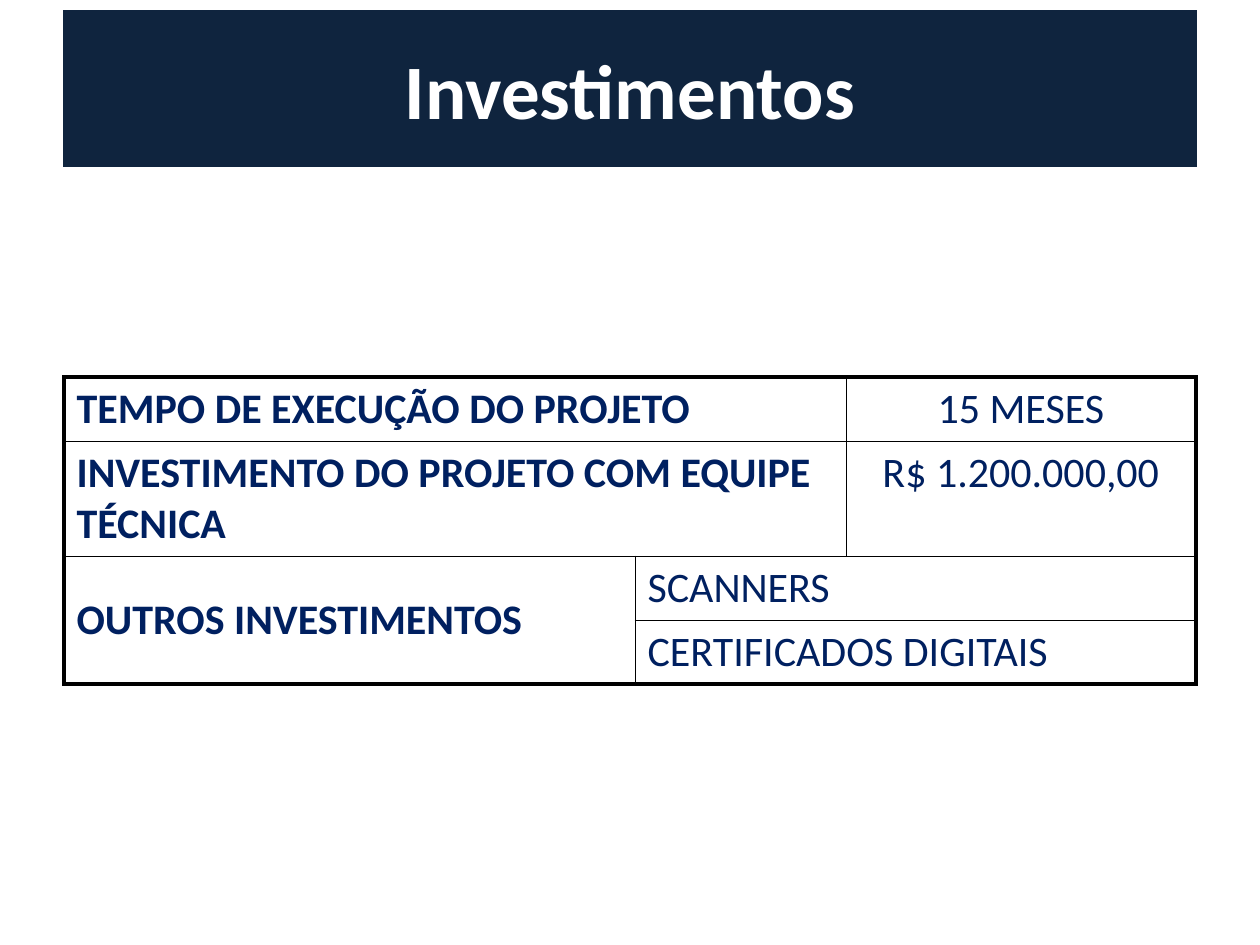
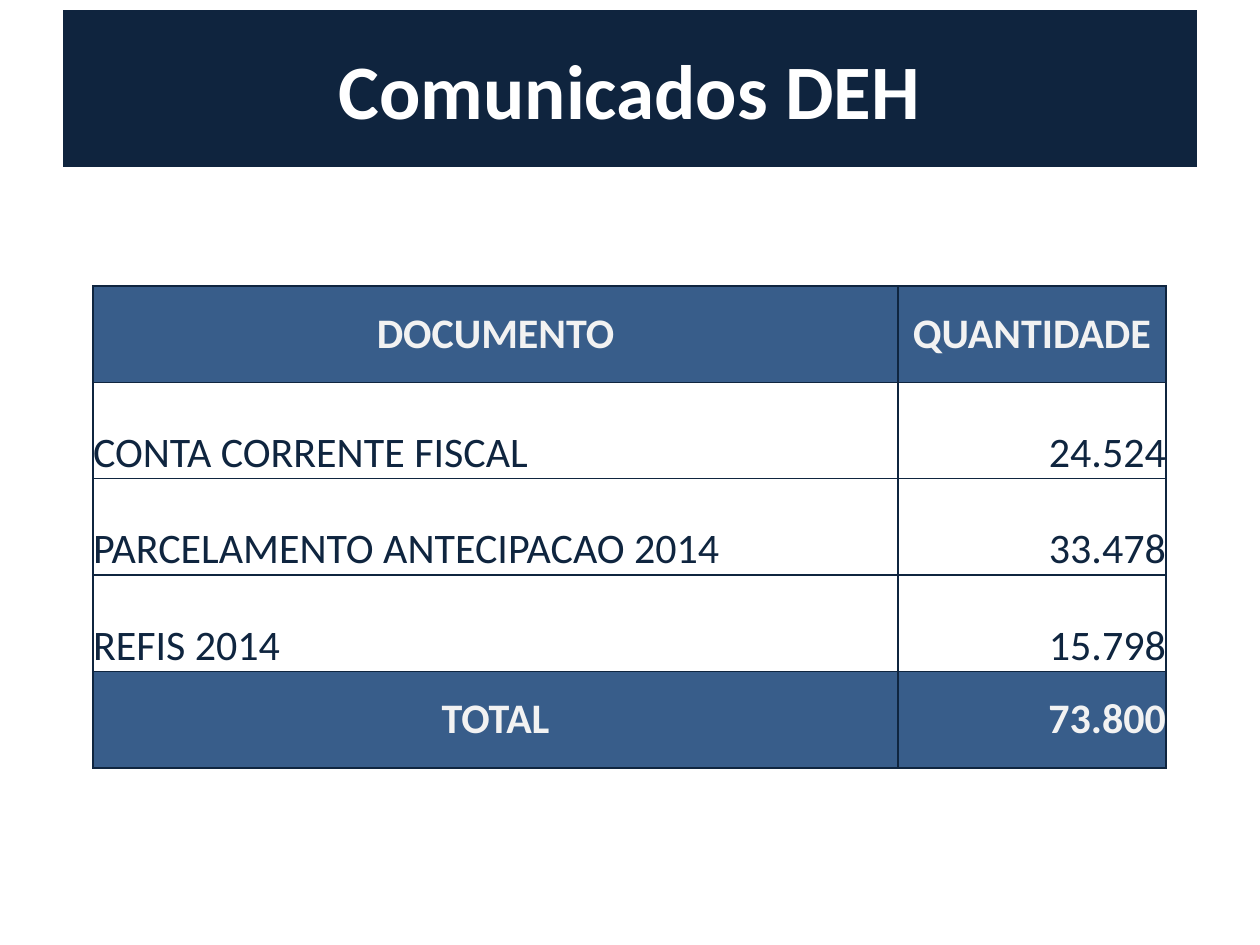
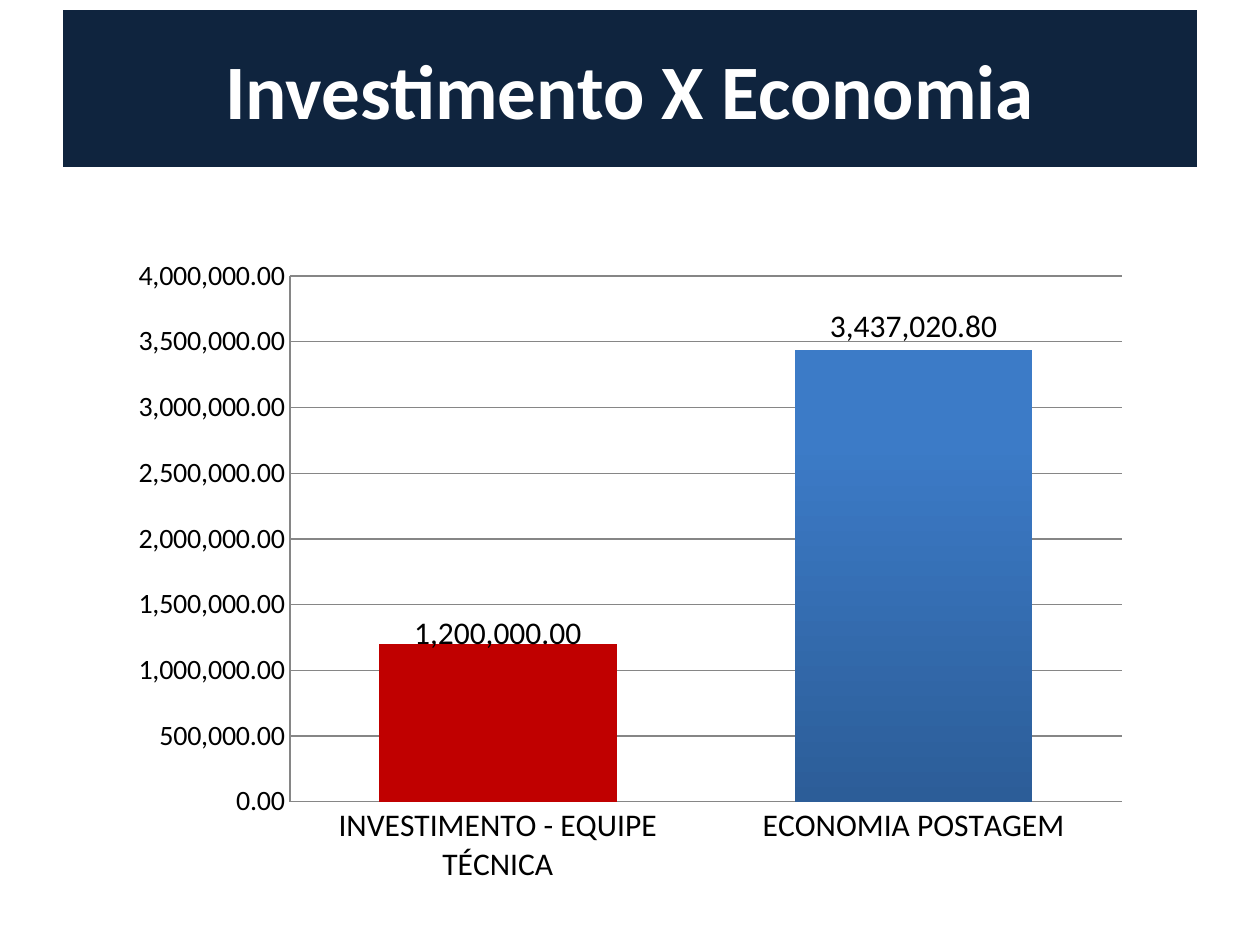
from lxml import etree
from pptx import Presentation
from pptx import util as u
from pptx.chart import data
from pptx.dml.color import RGBColor
from pptx.enum import chart as ch
from pptx.enum import text
from pptx.oxml import ns

EMU_PER_PX = 914400 / 126
FONT = "Calibri"
MONEY = "#,##0.00"
COLORS = {
    "band": "0F243E", "white": "FFFFFF", "black": "000000", "navy": "002060",
    "ink": "0F253F", "header": "385D8A", "header_text": "F2F2F2",
    "cost": "C00000", "saving_low": "2C5D98", "saving_high": "3C7BC7", "grid": "868686",
}
RGB = {name: RGBColor.from_string(value) for name, value in COLORS.items()}
LEFT, CENTER, RIGHT = text.PP_ALIGN.LEFT, text.PP_ALIGN.CENTER, text.PP_ALIGN.RIGHT
TOP, MIDDLE, BOTTOM = text.MSO_ANCHOR.TOP, text.MSO_ANCHOR.MIDDLE, text.MSO_ANCHOR.BOTTOM


def px(*lengths):
    return [u.Emu(round(length * EMU_PER_PX)) for length in lengths]


def format_cell(cell, color, bold, align, anchor, fill, line, widths):
    for side, width in zip("LRTB", widths):
        edge = etree.SubElement(cell._tc.get_or_add_tcPr(), ns.qn(f"a:ln{side}"), w=str(u.Pt(width)))
        paint = etree.SubElement(edge, ns.qn("a:solidFill"))
        etree.SubElement(paint, ns.qn("a:srgbClr"), val=COLORS[line])
    cell.fill.solid()
    cell.fill.fore_color.rgb = RGB[fill]
    cell.vertical_anchor = anchor
    paragraph = cell.text_frame.paragraphs[0]
    paragraph.alignment = align
    paragraph.font.name = FONT
    paragraph.font.size = u.Pt(24)
    paragraph.font.bold = bold
    paragraph.font.color.rgb = RGB[color]


prs = Presentation()
prs.slide_width, prs.slide_height = px(1260, 945)

slides = []
for heading in ["Investimentos", "Comunicados DEH", "Investimento X Economia"]:
    slide = prs.slides.add_slide(prs.slide_layouts[5])
    band = slide.shapes.title
    band.left, band.top, band.width, band.height = px(63, 10, 1134, 157)
    band.fill.solid()
    band.fill.fore_color.rgb = RGB["band"]
    band.text_frame.text = heading
    band.text_frame.vertical_anchor = MIDDLE
    paragraph = band.text_frame.paragraphs[0]
    paragraph.alignment = CENTER
    paragraph.font.name = FONT
    paragraph.font.size = u.Pt(44)
    paragraph.font.bold = True
    paragraph.font.color.rgb = RGB["white"]
    slides.append(slide)
investments_slide, notices_slide, comparison_slide = slides

investments = investments_slide.shapes.add_table(4, 3, *px(64, 377, 1132, 307)).table
for column, width in zip(investments.columns, px(571, 211, 350)):
    column.width = width
for row, height in zip(investments.rows, px(64, 115, 64, 64)):
    row.height = height
entries = [
    (0, 0, 1, 2, "TEMPO DE EXECUÇÃO DO PROJETO", True, LEFT),
    (0, 2, 1, 1, "15 MESES", False, CENTER),
    (1, 0, 1, 2, "INVESTIMENTO DO PROJETO COM EQUIPE TÉCNICA", True, LEFT),
    (1, 2, 1, 1, "R$ 1.200.000,00", False, CENTER),
    (2, 0, 2, 1, "OUTROS INVESTIMENTOS", True, LEFT),
    (2, 1, 1, 2, "SCANNERS", False, LEFT),
    (3, 1, 1, 2, "CERTIFICADOS DIGITAIS", False, LEFT),
]
for r, c, height, width, words, bold, align in entries:
    first = investments.cell(r, c)
    if height * width > 1:
        first.merge(investments.cell(r + height - 1, c + width - 1))
    first.text = words
    on_frame = (c == 0, c + width == 3, r == 0, r + height == 4)
    widths = [2.25 if outer else 0.5 for outer in on_frame]
    for i in range(r, r + height):
        for j in range(c, c + width):
            format_cell(investments.cell(i, j), "navy", bold, align,
                        MIDDLE if bold else TOP, "white", "black", widths)

counts = [
    ("DOCUMENTO", "QUANTIDADE"),
    ("CONTA CORRENTE FISCAL", "24.524"),
    ("PARCELAMENTO ANTECIPACAO 2014", "33.478"),
    ("REFIS 2014", "15.798"),
    ("TOTAL", "73.800"),
]
notices = notices_slide.shapes.add_table(5, 2, *px(93, 286, 1073, 482)).table
for column, width in zip(notices.columns, px(805, 268)):
    column.width = width
for r, record in enumerate(counts):
    strong = r in (0, len(counts) - 1)
    for c, words in enumerate(record):
        cell = notices.cell(r, c)
        cell.text = words
        cell.margin_left = cell.margin_right = cell.margin_top = cell.margin_bottom = 0
        if r == 0 or (strong and c == 0):
            align = CENTER
        else:
            align = RIGHT if c else LEFT
        format_cell(cell, "header_text" if strong else "ink", strong, align,
                    MIDDLE if strong else BOTTOM, "header" if strong else "white", "ink", [1] * 4)

amounts = data.CategoryChartData(number_format=MONEY)
amounts.categories = ["INVESTIMENTO - EQUIPE TÉCNICA", "ECONOMIA POSTAGEM"]
amounts.add_series("Series 1", [1200000, 3437020.8])
comparison = comparison_slide.shapes.add_chart(
    ch.XL_CHART_TYPE.COLUMN_CLUSTERED, *px(118, 246, 1024, 650), amounts).chart
comparison.has_legend = False
comparison.has_title = False
comparison.font.name = FONT
comparison.font.size = u.Pt(10)
comparison.font.color.rgb = RGB["black"]

for axis, size in [(comparison.category_axis, 18), (comparison.value_axis, 16)]:
    axis.major_tick_mark = axis.minor_tick_mark = ch.XL_TICK_MARK.NONE
    axis.tick_labels.font.size = u.Pt(size)
    axis.format.line.color.rgb = RGB["grid"]
scale = comparison.value_axis
scale.minimum_scale, scale.maximum_scale, scale.major_unit = 0, 4000000, 500000
scale.tick_labels.number_format = MONEY
scale.tick_labels.number_format_is_linked = False
scale.major_gridlines.format.line.color.rgb = RGB["grid"]

bars = comparison.plots[0]
bars.vary_by_categories = False
bars.gap_width = 75
bars.overlap = -25
totals = bars.series[0]
totals.format.fill.gradient()
totals.format.fill.gradient_angle = 90
low, high = totals.format.fill.gradient_stops
low.color.rgb, low.position = RGB["saving_low"], 0
high.color.rgb, high.position = RGB["saving_high"], 0.8
cost = totals.points[0]
cost.format.fill.solid()
cost.format.fill.fore_color.rgb = RGB["cost"]

labels = totals.data_labels
labels.show_value = True
labels.number_format = MONEY
labels.number_format_is_linked = False
labels.position = ch.XL_LABEL_POSITION.OUTSIDE_END
labels.font.size = u.Pt(18)
cost.data_label.position = ch.XL_LABEL_POSITION.OUTSIDE_END
cost.data_label.font.size = u.Pt(18)
cost_label = labels._element.find(ns.qn("c:dLbl"))
layout = etree.Element(ns.qn("c:layout"))
manual = etree.SubElement(layout, ns.qn("c:manualLayout"))
for axis, shift in [("x", "0"), ("y", "0.02")]:
    etree.SubElement(manual, ns.qn(f"c:{axis}"), val=shift)
cost_label.insert(1, layout)

prs.save("out.pptx")
